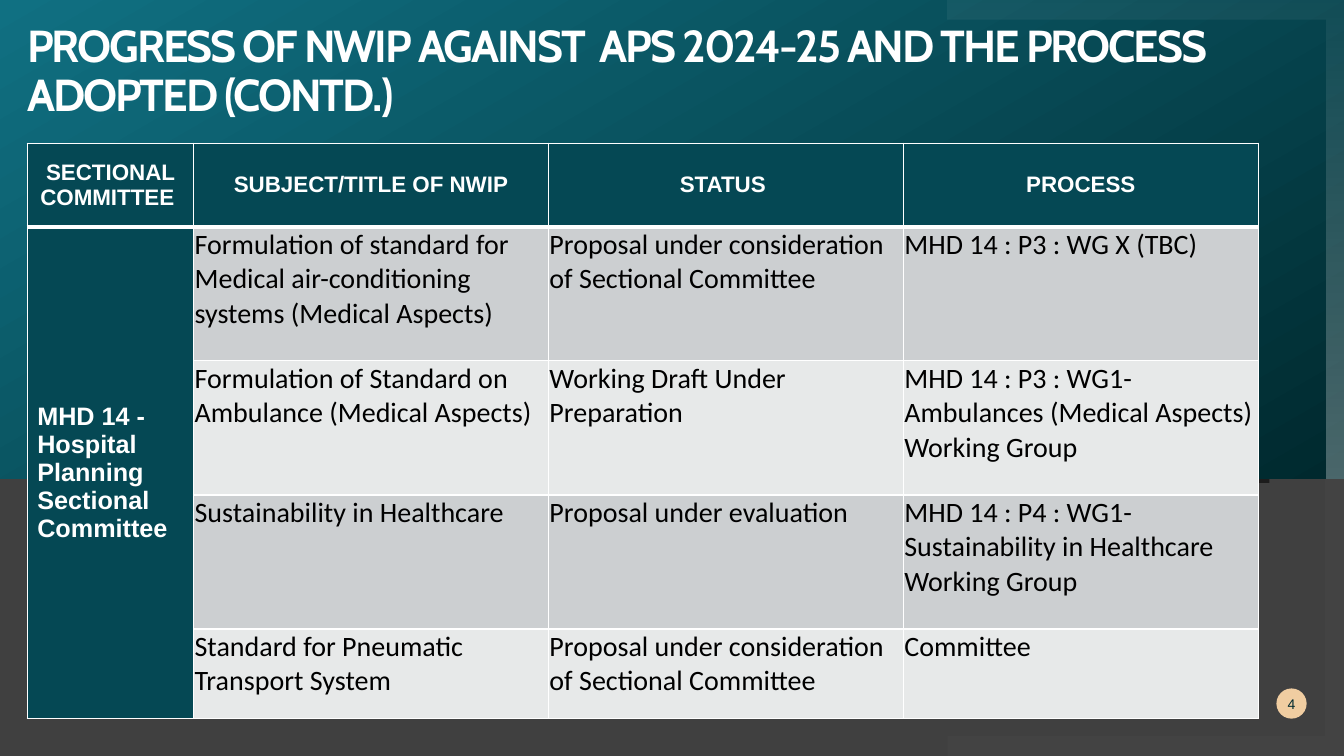
"""Build the NWIP progress slide."""
from dataclasses import dataclass

from lxml import etree
from pptx import Presentation
from pptx.dml.color import RGBColor
from pptx.enum.shapes import MSO_SHAPE
from pptx.enum.text import MSO_ANCHOR, PP_ALIGN
from pptx.oxml.ns import qn
from pptx.util import Inches, Pt

RECT, OVAL = MSO_SHAPE.RECTANGLE, MSO_SHAPE.OVAL
TOP, MID = MSO_ANCHOR.TOP, MSO_ANCHOR.MIDDLE
LEFT, MIDST = PP_ALIGN.LEFT, PP_ALIGN.CENTER

WHITE = RGBColor(0xFF, 0xFF, 0xFF)
BLACK = RGBColor(0x00, 0x00, 0x00)
SLATE = RGBColor(0x40, 0x40, 0x40)
GREY = RGBColor(0x80, 0x80, 0x80)
DARK = RGBColor(0x00, 0x29, 0x2E)
TEAL = RGBColor(0x10, 0x70, 0x82)
DEEP = RGBColor(0x05, 0x48, 0x54)
SAND = RGBColor(0xF0, 0xCD, 0xA1)
BANDS = (RGBColor(0xCC, 0xCF, 0xD1), RGBColor(0xE7, 0xE9, 0xE9))


@dataclass
class Font:
    name: str
    size: int
    color: RGBColor
    bold: bool = False


@dataclass
class Look:
    font: Font
    fill: RGBColor
    align: PP_ALIGN = LEFT
    anchor: MSO_ANCHOR = MID
    pad: tuple = (0.1, 0.05, 0.1, 0.05)


HEAD = Look(Font("Arial", 16, WHITE, True), DEEP, MIDST)
GROUP = Look(Font("Arial", 18, WHITE, True), DEEP)
BODY = [Look(Font("Calibri", 20, BLACK), band, LEFT, TOP, (0.01, 0.01, 0.01, 0))
        for band in BANDS]

TITLE = "PROGRESS OF NWIP AGAINST  APS 2024-25 AND THE PROCESS ADOPTED (CONTD.)"
COLS = (1.65, 3.52, 3.52, 3.52)
ROWS = (0.83, 1.33, 1.33, 1.33, 0.89)
COMMITTEE = "MHD 14 - Hospital Planning Sectional Committee"
CELLS = (
    ("SECTIONAL COMMITTEE ", "SUBJECT/TITLE OF NWIP", "STATUS ", "PROCESS"),
    (COMMITTEE,
     "Formulation of standard for Medical air-conditioning systems (Medical Aspects)",
     "Proposal under consideration of Sectional Committee",
     "MHD 14 : P3 : WG X (TBC)"),
    ("", "Formulation of Standard on Ambulance (Medical Aspects)",
     "Working Draft Under Preparation",
     "MHD 14 : P3 : WG1-Ambulances (Medical Aspects) Working Group"),
    ("", "Sustainability in Healthcare", "Proposal under evaluation",
     "MHD 14 : P4 : WG1-Sustainability in Healthcare Working Group"),
    ("", "Standard for Pneumatic Transport System",
     "Proposal under consideration of Sectional Committee", "Committee"),
)
UPPER = ((9.4, 0), (13.33, 0), (13.33, 4.75), (13.14, 4.75), (13.14, 0.2), (9.4, 0.2))
LOWER = ((13.14, 4.75), (13.33, 4.75), (13.33, 7.5), (9.4, 7.5), (9.4, 7.3), (13.14, 7.3))


def fade(node, alphas: tuple) -> None:
    for color, alpha in zip(node.iter(qn("a:srgbClr")), alphas):
        etree.SubElement(color, qn("a:alpha"), val=str(alpha * 1000))


def paint(shape, color: RGBColor, alpha: int = 100) -> None:
    shape.shadow.inherit = False
    shape.line.fill.background()
    shape.fill.solid()
    shape.fill.fore_color.rgb = color
    if alpha < 100:
        fade(shape.fill._xPr, (alpha,))


def blend(shape, colors: tuple, angle: int) -> None:
    shape.shadow.inherit = False
    shape.line.fill.background()
    shape.fill.gradient()
    shape.fill.gradient_angle = angle
    for stop, color, place in zip(shape.fill.gradient_stops, colors, (0, 1)):
        stop.color.rgb = color
        stop.position = place


def block(slide, kind: MSO_SHAPE, *box: float):
    return slide.shapes.add_shape(kind, *map(Inches, box))


def frame(slide, points: tuple):
    spots = [(Inches(x), Inches(y)) for x, y in points]
    pen = slide.shapes.build_freeform(*spots[0])
    pen.add_line_segments(spots[1:], close=True)
    return pen.convert_to_shape()


def write(text_frame, text: str, font: Font, align: PP_ALIGN = LEFT):
    para = text_frame.paragraphs[0]
    para.alignment = align
    run = para.add_run()
    run.text = text
    run.font.name, run.font.size = font.name, Pt(font.size)
    run.font.bold, run.font.color.rgb = font.bold, font.color
    return run


def inset(item, pad: tuple) -> None:
    (item.margin_left, item.margin_top,
     item.margin_right, item.margin_bottom) = map(Inches, pad)


def edge(cell, row: int) -> None:
    props = cell._tc.get_or_add_tcPr()
    widths = {"L": 1, "R": 1, "T": 3 if row == 1 else 1, "B": 3 if row == 0 else 1}
    for spot, (side, width) in enumerate(widths.items()):
        line = etree.Element(qn(f"a:ln{side}"), w=str(Pt(width)))
        fill = etree.SubElement(line, qn("a:solidFill"))
        etree.SubElement(fill, qn("a:srgbClr"), val=str(WHITE))
        props.insert(spot, line)


def style(cell, text: str, look: Look) -> None:
    cell.fill.solid()
    cell.fill.fore_color.rgb = look.fill
    cell.vertical_anchor = look.anchor
    inset(cell, look.pad)
    if text:
        write(cell.text_frame, text, look.font, look.align)


def choose(row: int, col: int) -> Look:
    if row == 0:
        return HEAD
    return GROUP if col == 0 else BODY[(row - 1) % 2]


def draw_table(slide) -> None:
    box = map(Inches, (0.27, 1.42, sum(COLS), sum(ROWS)))
    table = slide.shapes.add_table(len(ROWS), len(COLS), *box).table
    for col, width in zip(table.columns, COLS):
        col.width = Inches(width)
    for row, height in zip(table.rows, ROWS):
        row.height = Inches(height)
    for r, texts in enumerate(CELLS):
        for c, text in enumerate(texts):
            style(table.cell(r, c), text, choose(r, c))
            edge(table.cell(r, c), r)
    table.cell(1, 0).merge(table.cell(len(ROWS) - 1, 0))


def draw_back(slide) -> None:
    slide.background.fill.solid()
    slide.background.fill.fore_color.rgb = SLATE
    paint(block(slide, RECT, 0.74, 4.74, 11.85, 0.05), BLACK, 56)
    blend(block(slide, RECT, 0, 0, 13.33, 4.75), (DARK, TEAL), 120)
    upper = frame(slide, UPPER)
    blend(upper, (WHITE, WHITE), 270)
    fade(upper.fill._xPr, (5, 30))
    paint(frame(slide, LOWER), GREY, 5)


def draw_badge(slide) -> None:
    badge = block(slide, OVAL, 12.66, 6.83, 0.3, 0.3)
    paint(badge, SAND)
    inset(badge.text_frame, (0, 0, 0, 0))
    badge.text_frame.vertical_anchor = MID
    write(badge.text_frame, "4", Font("Arial", 10, DARK), MIDST)


def draw_title(slide) -> None:
    box = slide.shapes.add_textbox(*map(Inches, (0.27, 0.24, 12.69, 0.96)))
    box.text_frame.word_wrap = True
    inset(box.text_frame, (0, 0, 0, 0))
    run = write(box.text_frame, TITLE, Font("Cabin", 32, WHITE, True))
    run.font._element.set("spc", "-150")
    box.text_frame.paragraphs[0].line_spacing = 0.9


def main() -> None:
    deck = Presentation()
    deck.slide_width, deck.slide_height = Inches(13.33), Inches(7.5)
    slide = deck.slides.add_slide(deck.slide_layouts[6])
    draw_back(slide)
    draw_badge(slide)
    draw_table(slide)
    draw_title(slide)
    deck.save("out.pptx")


if __name__ == "__main__":
    main()
